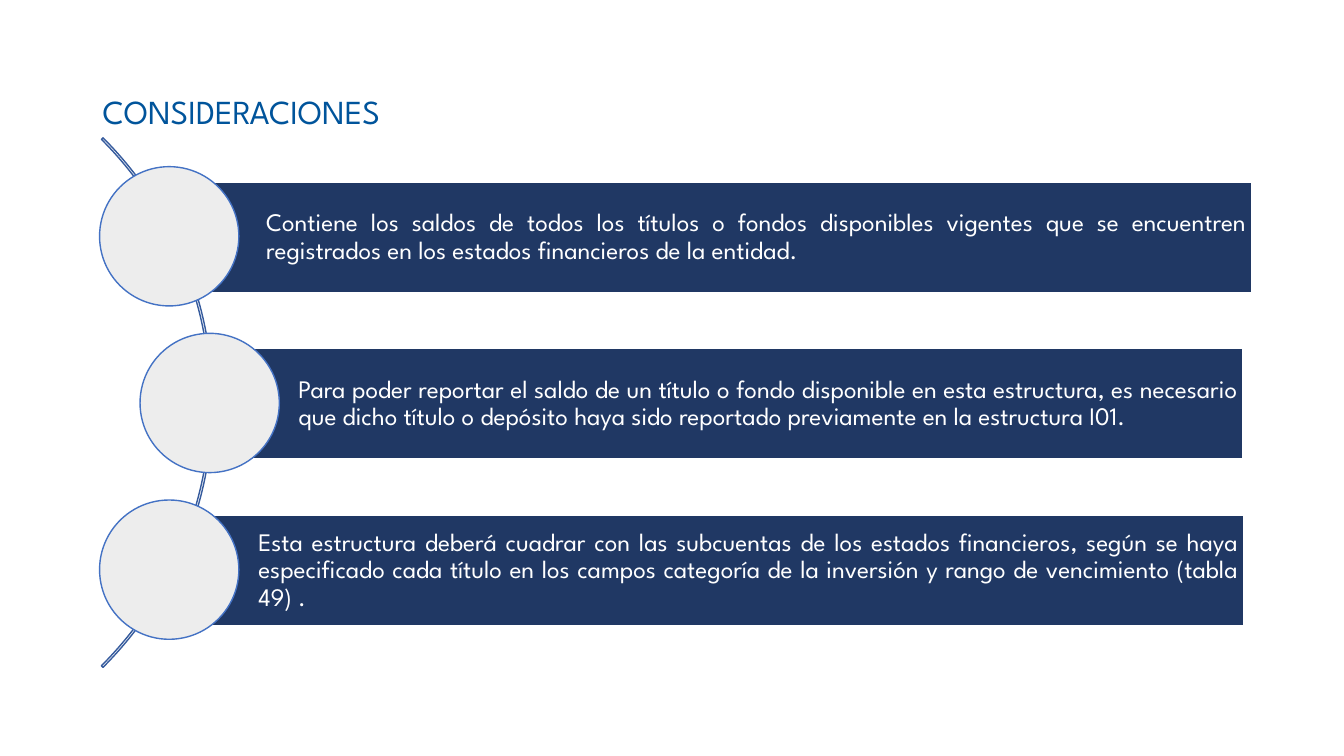
from pptx import Presentation
from pptx.dml.color import RGBColor
from pptx.enum.shapes import MSO_SHAPE
from pptx.enum.text import MSO_ANCHOR, PP_ALIGN
from pptx.util import Cm, Pt


def rgb(code):
    return RGBColor.from_string(code)


def write(shape, text, size=18, color="FFFFFF", align=PP_ALIGN.JUSTIFY, left=0.25, side=0.13):
    frame = shape.text_frame
    frame.word_wrap = True
    frame.vertical_anchor = MSO_ANCHOR.MIDDLE
    frame.margin_left, frame.margin_right = Cm(left), Cm(side)
    frame.margin_top = frame.margin_bottom = Cm(0.13)
    para = frame.paragraphs[0]
    para.alignment = align
    para.line_spacing = 0.9
    run = para.add_run()
    run.text = text
    run.font.name = "League Spartan"
    run.font.size = Pt(size)
    run.font.color.rgb = rgb(color)


deck = Presentation()
deck.slide_width, deck.slide_height = Cm(33.87), Cm(19.05)
slide = deck.slides.add_slide(deck.slide_layouts[6])
shapes = slide.shapes

# Title
title = shapes.add_textbox(Cm(2.34), Cm(1.02), Cm(29.21), Cm(3.68))
write(title, "CONSIDERACIONES", size=24, color="00549B", align=PP_ALIGN.LEFT, side=0.25)

# Thin arc behind the list
arc = shapes.add_shape(MSO_SHAPE.BLOCK_ARC, Cm(-13.51), Cm(0.71), Cm(18.87), Cm(18.87))
for i, value in enumerate((189, 27, 0.003)):
    arc.adjustments[i] = value
arc.shadow.inherit = False
arc.fill.background()
arc.line.color.rgb = rgb("365B9D")
arc.line.width = Pt(1)

# Bars with their circles: bar left, bar width, circle left, text
items = [
    (4.47, 27.08, 2.51, "Contiene los saldos de todos los títulos o fondos disponibles vigentes "
     "que se encuentren registrados en los estados financieros de la entidad."),
    (5.28, 26.06, 3.53, "Para poder reportar el saldo de un título o fondo disponible en esta "
     "estructura, es necesario que dicho título o depósito haya sido reportado previamente "
     "en la estructura I01."),
    (4.27, 27.08, 2.51, "Esta estructura deberá cuadrar con las subcuentas de los estados "
     "financieros, según se haya especificado cada título en los campos categoría de la "
     "inversión y rango de vencimiento (tabla 49) ."),
]
step = 4.2
for i, (left, width, edge, text) in enumerate(items):
    bar = shapes.add_shape(MSO_SHAPE.RECTANGLE, Cm(left), Cm(4.58 + i * step), Cm(width), Cm(2.8))
    disc = shapes.add_shape(MSO_SHAPE.OVAL, Cm(edge), Cm(4.2 + i * step), Cm(3.51), Cm(3.51))
    for shape, fill, line, weight in ((bar, "203864", "FFFFFF", 1.5), (disc, "EDEDED", "4472C4", 1)):
        shape.shadow.inherit = False
        shape.fill.solid()
        shape.fill.fore_color.rgb = rgb(fill)
        shape.line.color.rgb = rgb(line)
        shape.line.width = Pt(weight)
    write(bar, text, left=2.24)

deck.save("out.pptx")
